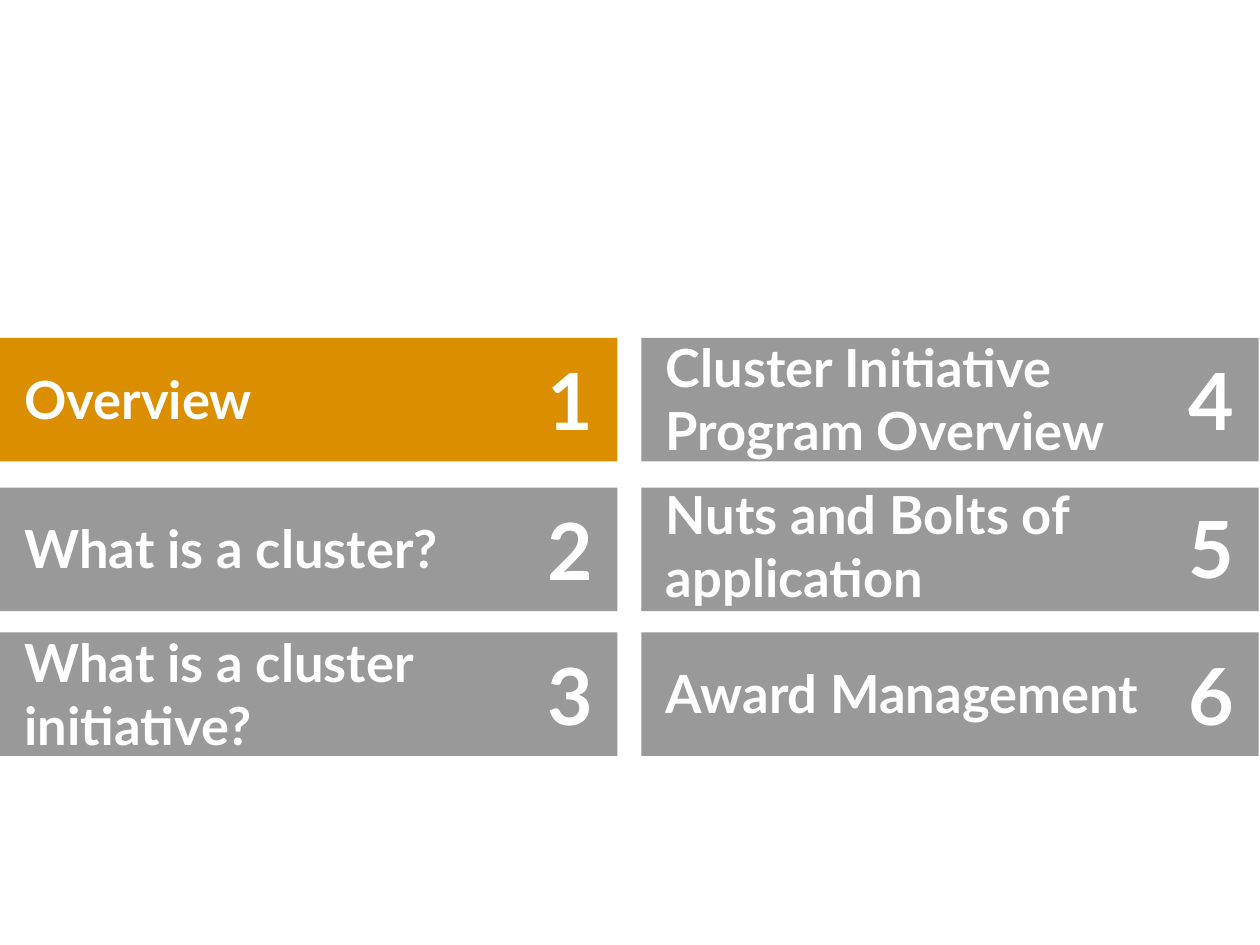
from dataclasses import dataclass

from lxml.etree import SubElement
from pptx import Presentation
from pptx.dml.color import RGBColor
from pptx.enum.shapes import MSO_SHAPE
from pptx.enum.text import MSO_ANCHOR, MSO_AUTO_SIZE, PP_ALIGN
from pptx.oxml.ns import qn
from pptx.util import Pt


@dataclass(frozen=True)
class Theme:
    font: str = "Lato"
    text: RGBColor = RGBColor(0xFF, 0xFF, 0xFF)
    active: RGBColor = RGBColor(0xDA, 0x8E, 0x00)
    inactive: RGBColor = RGBColor(0x34, 0x34, 0x34)
    inactive_opacity: int = 50
    title_size: int = 30
    number_size: int = 45


THEME = Theme()
COLUMN_LEFTS = (0, 366.5)
ROW_TOPS = (193, 278.6, 361.4)
BAR_WIDTH, BAR_HEIGHT = 352.8, 70.6
ACTIVE_NUMBER = 1
# The label of this topic sits slightly higher in its bar.
RAISED_NUMBER, RAISE = 5, 1.5
TOPICS = (
    "Overview",
    "What is a cluster?",
    "What is a cluster initiative?",
    "Cluster Initiative Program Overview",
    "Nuts and Bolts of application",
    "Award Management",
)


def set_opacity(shape, percent):
    color = shape.fill._xPr.find(qn("a:solidFill"))[0]
    SubElement(color, qn("a:alpha")).set("val", str(percent * 1000))


def add_bar(page, left, top, active):
    bar = page.shapes.add_shape(
        MSO_SHAPE.RECTANGLE, Pt(left), Pt(top), Pt(BAR_WIDTH), Pt(BAR_HEIGHT))
    bar.shadow.inherit = False
    bar.line.fill.background()
    bar.fill.solid()
    bar.fill.fore_color.rgb = THEME.active if active else THEME.inactive
    if not active:
        set_opacity(bar, THEME.inactive_opacity)


def add_label(page, text, left, top, width, height, size):
    box = page.shapes.add_textbox(Pt(left), Pt(top), Pt(width), Pt(height))
    frame = box.text_frame
    frame.margin_left = frame.margin_right = 0
    frame.margin_top = frame.margin_bottom = 0
    frame.vertical_anchor = MSO_ANCHOR.MIDDLE
    frame.word_wrap = True
    frame.text = text
    font = frame.paragraphs[0].runs[0].font
    font.name, font.size, font.bold = THEME.font, Pt(size), True
    font.color.rgb = THEME.text
    return frame


def add_number(page, number, left, top):
    frame = add_label(page, str(number), left, top, 26.6, 54.7, THEME.number_size)
    frame.word_wrap = False
    frame.auto_size = MSO_AUTO_SIZE.SHAPE_TO_FIT_TEXT
    frame.paragraphs[0].alignment = PP_ALIGN.RIGHT


def add_topic(page, number, title):
    column, row = divmod(number - 1, len(ROW_TOPS))
    left, top = COLUMN_LEFTS[column], ROW_TOPS[row]
    add_bar(page, left, top, number == ACTIVE_NUMBER)
    label_top = top - RAISE if number == RAISED_NUMBER else top
    add_label(page, title, left + 14, label_top + 14.4, 295.2, 40.3, THEME.title_size)
    add_number(page, number, left + 312.2, label_top + 7.9)


def main():
    deck = Presentation()
    deck.slide_width, deck.slide_height = Pt(720), Pt(540)
    page = deck.slides.add_slide(deck.slide_layouts[6])
    for number, title in enumerate(TOPICS, start=1):
        add_topic(page, number, title)
    deck.save("out.pptx")


if __name__ == "__main__":
    main()
